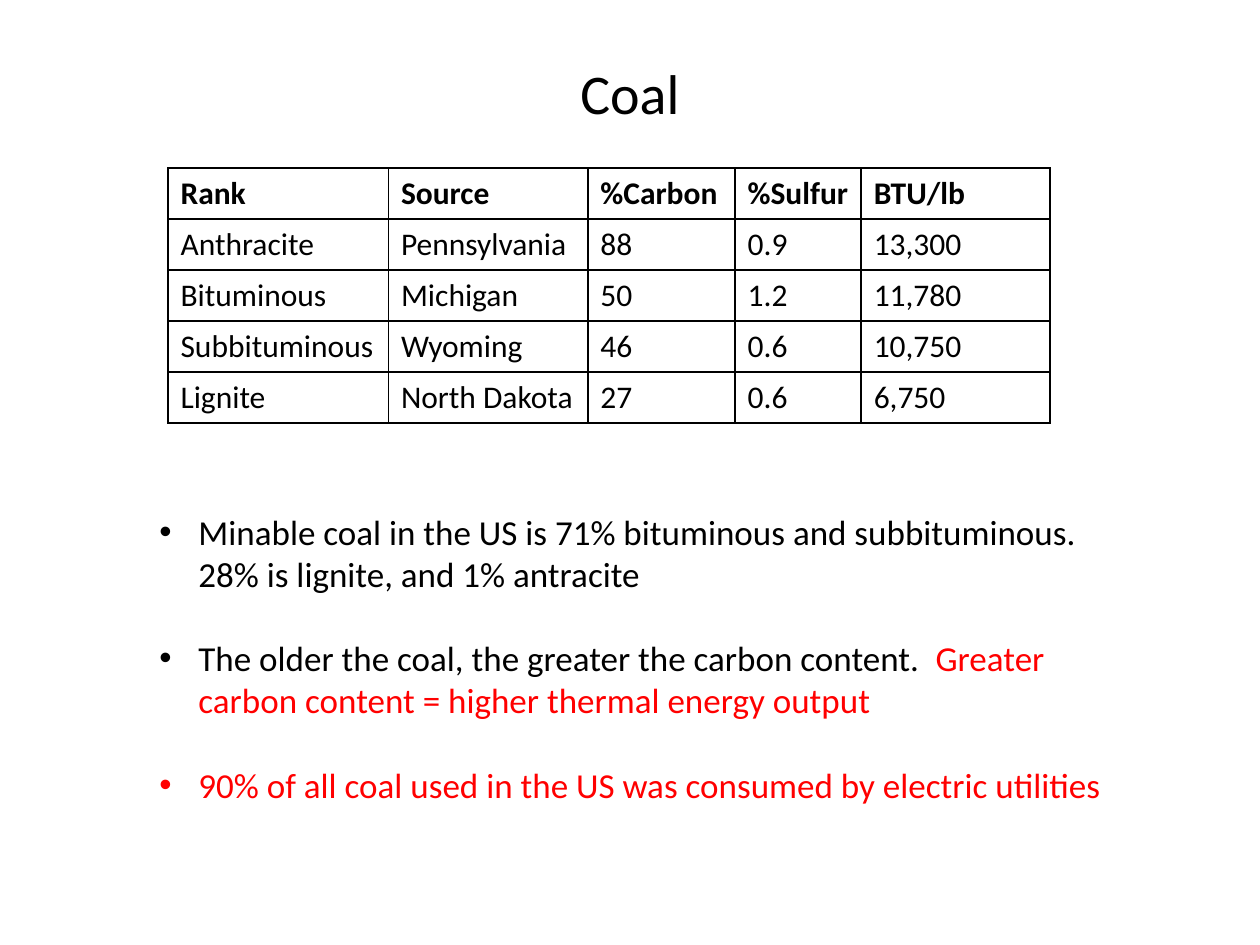
import pptx
import pptx.dml.color
import pptx.enum.text
import pptx.oxml
import pptx.oxml.ns
import pptx.util
from lxml import etree

TITLE = "Coal"
COAL_TABLE = [
    ("Rank", "Source", "%Carbon", "%Sulfur", "BTU/lb"),
    ("Anthracite", "Pennsylvania", "88", "0.9", "13,300"),
    ("Bituminous", "Michigan", "50", "1.2", "11,780"),
    ("Subbituminous", "Wyoming", "46", "0.6", "10,750"),
    ("Lignite", "North Dakota", "27", "0.6", "6,750"),
]
# Each bullet is a list of (text, theme colour) pieces.
BULLETS = [
    [("Minable coal in the US is 71% bituminous and subbituminous.  "
      "28% is lignite, and 1% antracite", "text")],
    [("The older the coal, the greater the carbon content.  ", "text"),
     ("Greater carbon content = higher thermal energy output", "accent")],
    [("90% of all coal used in the US was consumed by electric utilities", "accent")],
]

THEME = {
    "font": "Calibri",
    "text": "000000", "accent": "FF0000", "border": "000000",
    "title_size": 32, "table_size": 18, "bullet_size": 20,
    "bullet_gap": 24.4, "border_width": 1,
}
WIDTH, HEIGHT = pptx.util.Inches(10), pptx.util.Inches(7.5)

# Shares of the slide: left, top, width, height
TITLE_AREA = (0.05, 0.04, 0.9, 0.116)
TABLE_AREA = (0.1333, 0.1778, 0.7, 0.2703)
BULLET_AREA = (0.1167, 0.5333, 0.7833, 0.328)
COLUMN_SHARES = (0.25, 0.226, 0.167, 0.143, 0.214)
BULLET_INDENT = pptx.util.Inches(0.31)


def place(area):
    """Turn shares of the slide into lengths."""
    return [round(share * side) for share, side in zip(area, (WIDTH, HEIGHT) * 2)]


def add_text(paragraph, text, *, size, color="text", bold=False):
    run = paragraph.add_run()
    run.text = text
    run.font.name = THEME["font"]
    run.font.size = pptx.util.Pt(size)
    run.font.bold = bold
    run.font.color.rgb = pptx.dml.color.RGBColor.from_string(THEME[color])


def add_text_frame(slide, area):
    frame = slide.shapes.add_textbox(*place(area)).text_frame
    frame.word_wrap = True
    return frame


def add_borders(cell):
    properties = cell._tc.get_or_add_tcPr()
    width = pptx.util.Pt(THEME["border_width"])
    namespace = pptx.oxml.ns.nsdecls("a")
    for position, side in enumerate(("lnL", "lnR", "lnT", "lnB")):
        properties.insert(position, pptx.oxml.parse_xml(
            f'<a:{side} {namespace} w="{width}"><a:solidFill>'
            f'<a:srgbClr val="{THEME["border"]}"/></a:solidFill></a:{side}>'))


def add_bullet(paragraph):
    properties = paragraph._p.get_or_add_pPr()
    properties.set("marL", str(BULLET_INDENT))
    properties.set("indent", str(-BULLET_INDENT))
    for tag, name, value in (("a:buFont", "typeface", "Arial"), ("a:buChar", "char", "•")):
        etree.SubElement(properties, pptx.oxml.ns.qn(tag)).set(name, value)


def add_title(slide):
    frame = add_text_frame(slide, TITLE_AREA)
    frame.vertical_anchor = pptx.enum.text.MSO_ANCHOR.MIDDLE
    frame.paragraphs[0].alignment = pptx.enum.text.PP_ALIGN.CENTER
    add_text(frame.paragraphs[0], TITLE, size=THEME["title_size"])


def add_coal_table(slide):
    left, top, width, height = place(TABLE_AREA)
    table = slide.shapes.add_table(
        len(COAL_TABLE), len(COLUMN_SHARES), left, top, width, height).table
    table.horizontal_banding = False
    for column, share in zip(table.columns, COLUMN_SHARES):
        column.width = round(width * share)
    for row_index, row in enumerate(COAL_TABLE):
        for column_index, text in enumerate(row):
            cell = table.cell(row_index, column_index)
            cell.fill.background()
            add_borders(cell)
            add_text(cell.text_frame.paragraphs[0], text,
                     size=THEME["table_size"], bold=row_index == 0)


def add_bullets(slide):
    frame = add_text_frame(slide, BULLET_AREA)
    for index, pieces in enumerate(BULLETS):
        paragraph = frame.add_paragraph() if index else frame.paragraphs[0]
        if index:
            paragraph.space_before = pptx.util.Pt(THEME["bullet_gap"])
        add_bullet(paragraph)
        for text, color in pieces:
            add_text(paragraph, text, size=THEME["bullet_size"], color=color)


def main():
    presentation = pptx.Presentation()
    presentation.slide_width, presentation.slide_height = WIDTH, HEIGHT
    slide = presentation.slides.add_slide(presentation.slide_layouts[6])
    add_title(slide)
    add_coal_table(slide)
    add_bullets(slide)
    presentation.save("out.pptx")


if __name__ == "__main__":
    main()
